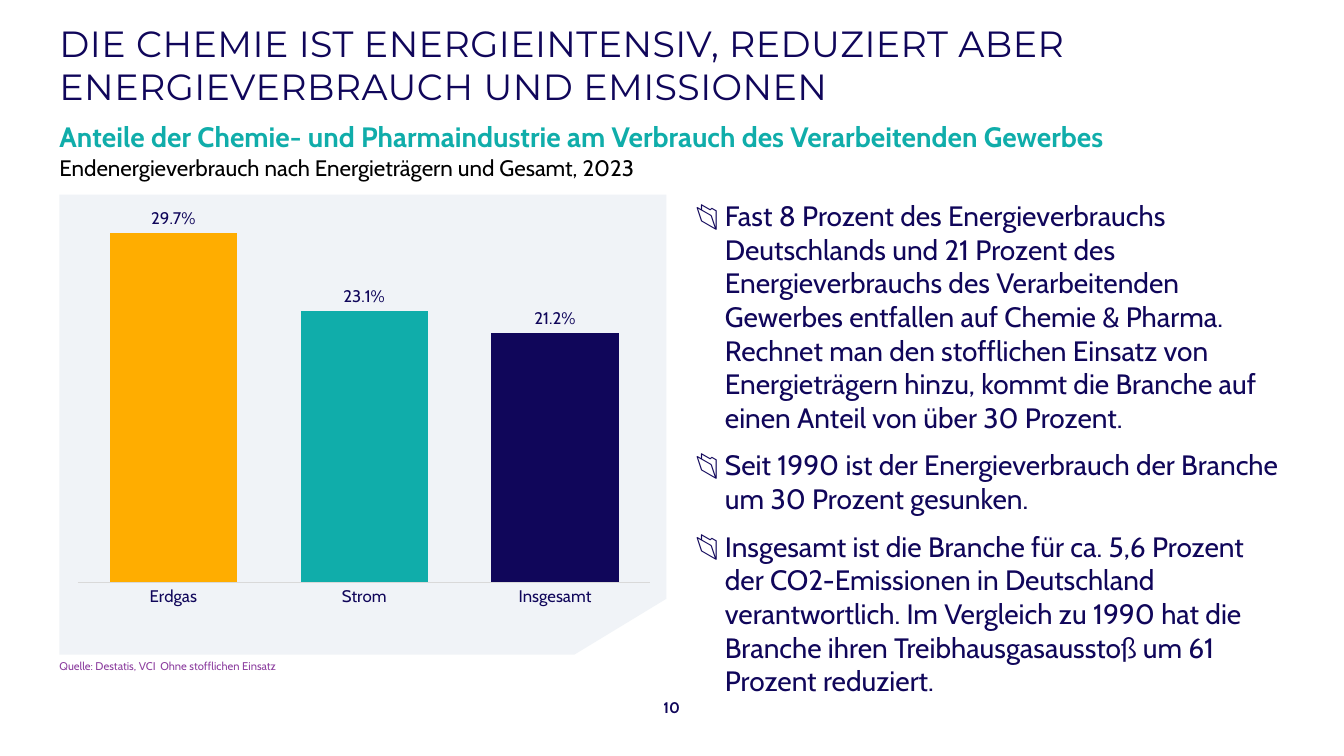
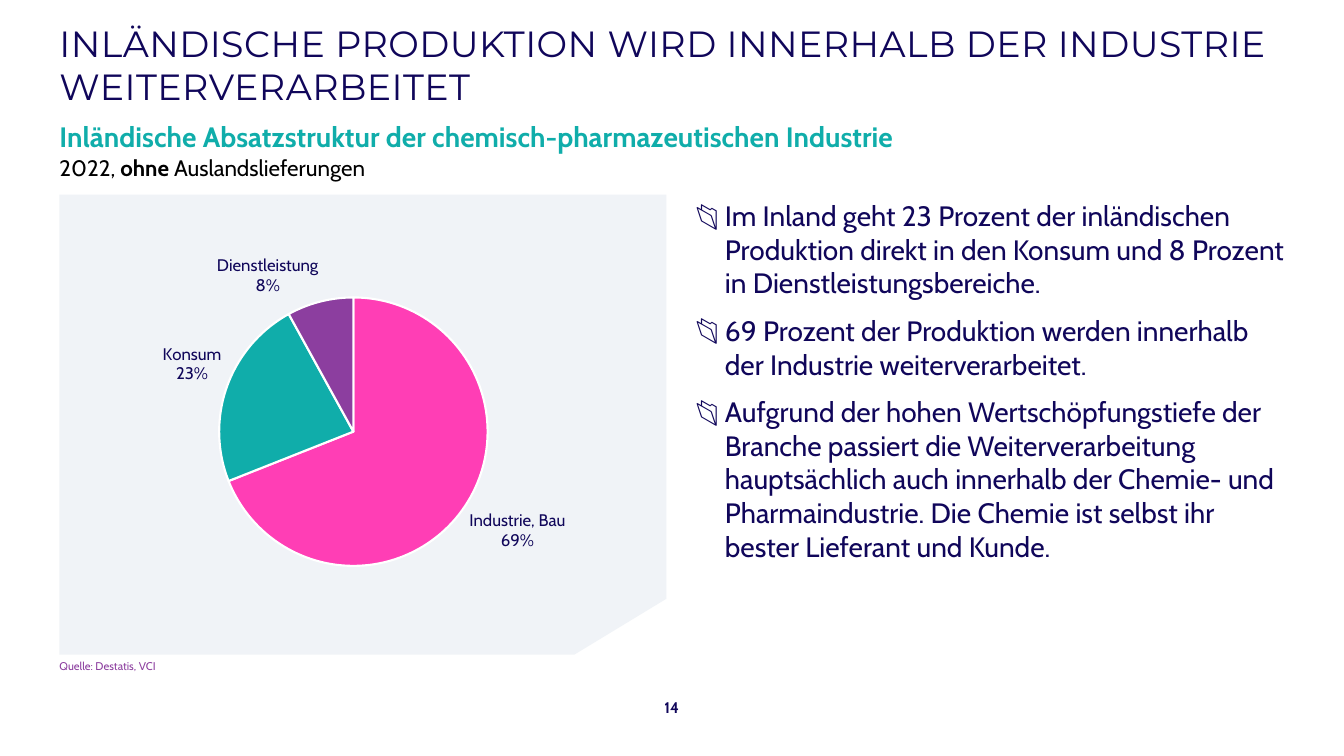
from lxml import etree
from pptx import Presentation
from pptx.chart.data import CategoryChartData
from pptx.dml.color import RGBColor
from pptx.enum.chart import XL_CHART_TYPE as CT, XL_LABEL_POSITION as LP, XL_TICK_MARK as TM
from pptx.enum.text import MSO_ANCHOR as VA, MSO_AUTO_SIZE as FIT, PP_ALIGN as AL
from pptx.oxml import parse_xml
from pptx.oxml.ns import nsdecls, qn
from pptx.util import Pt

# Content; ** encloses bold words
SLIDES = [
    {
        "number": "10",
        "title": "DIE CHEMIE IST ENERGIEINTENSIV, REDUZIERT ABER ENERGIEVERBRAUCH UND EMISSIONEN",
        "heading": "Anteile der Chemie- und Pharmaindustrie am Verbrauch des Verarbeitenden Gewerbes",
        "subheading": "Endenergieverbrauch nach Energieträgern und Gesamt, 2023",
        "source": "Quelle: Destatis, VCI\tOhne stofflichen Einsatz",
        "bullets": [
            "Fast 8 Prozent des Energieverbrauchs Deutschlands und 21 Prozent des "
            "Energieverbrauchs des Verarbeitenden Gewerbes entfallen auf Chemie & Pharma. "
            "Rechnet man den stofflichen Einsatz von Energieträgern hinzu, kommt die Branche "
            "auf einen Anteil von über 30 Prozent.",
            "Seit 1990 ist der Energieverbrauch der Branche um 30 Prozent gesunken.",
            "Insgesamt ist die Branche für ca. 5,6 Prozent der CO2-Emissionen in Deutschland "
            "verantwortlich. Im Vergleich zu 1990 hat die Branche ihren Treibhausgasausstoß "
            "um 61 Prozent reduziert.",
        ],
        "chart": {
            "type": CT.COLUMN_CLUSTERED, "format": "0.0%", "plot": (0.016, 0.053, 0.981, 0.816),
            "points": [("Erdgas", 0.297, "amber"), ("Strom", 0.231, "teal"),
                       ("Insgesamt", 0.212, "navy")],
        },
    },
    {
        "number": "14",
        "title": "INLÄNDISCHE PRODUKTION WIRD INNERHALB DER INDUSTRIE WEITERVERARBEITET",
        "heading": "Inländische Absatzstruktur der chemisch-pharmazeutischen Industrie",
        "subheading": "2022, **ohne** Auslandslieferungen",
        "source": "Quelle: Destatis, VCI",
        "bullets": [
            "Im Inland geht 23 Prozent der inländischen Produktion direkt in den Konsum und "
            "8 Prozent in Dienstleistungsbereiche.",
            "69 Prozent der Produktion werden innerhalb der Industrie weiterverarbeitet.",
            "Aufgrund der hohen Wertschöpfungstiefe der Branche passiert die "
            "Weiterverarbeitung hauptsächlich auch innerhalb der Chemie- und Pharmaindustrie. "
            "Die Chemie ist selbst ihr bester Lieferant und Kunde.",
        ],
        "chart": {
            "type": CT.PIE, "format": "0%", "plot": (0.258, 0.138, 0.46, 0.765),
            "points": [("Industrie, Bau", 69, "pink"), ("Konsum", 23, "teal"),
                       ("Dienstleistung", 8, "purple")],
        },
    },
]

# Shared look
COLORS = {"navy": "10065A", "teal": "10ADAA", "purple": "8C3E9F", "amber": "FFAD00",
          "pink": "FF3EB5", "panel": "F0F3F7", "axis": "D9D9D9", "black": "000000",
          "white": "FFFFFF"}
FONT, TITLE_FONT = "Cabin", "Montserrat"
LEFT, WIDE, TOP = 42.5, 878.4, 139
PANEL = [(LEFT, TOP), (476, TOP), (476, 427.7), (410.4, 467.5), (LEFT, 467.5)]
CHART_BOX = (49, 147.6, 416.9, 308.9)
NUMBER_BOX = (458.6, 495.4, 42.5, 20.2)
# Placeholder index, box and text style of each part
PARTS = {
    "title": (0, (LEFT, 10.8, WIDE, 70.6),
              dict(size=26, font=TITLE_FONT, anchor=VA.MIDDLE, inset=2.9, spacing=30)),
    "heading": (1, (LEFT, 85.7, WIDE, 22.3), dict(size=20, color="teal", bold=True)),
    "subheading": (2, (LEFT, 110.2, WIDE, 20.2), dict(size=16, color="black")),
    "bullets": (3, (496.8, TOP, 424, 317.5), dict(size=20, inset=2.9, bullet="📂")),
    "source": (4, (LEFT, 470.9, 793.4, 9.4), dict(size=8, color="purple", tab=144)),
}


def rgb(name):
    return RGBColor.from_string(COLORS[name])


def place(shape, box):
    shape.left, shape.top, shape.width, shape.height = map(Pt, box)


def set_list_style(p, bullet, tab):
    pPr = p._p.get_or_add_pPr()
    hang = Pt(21) if bullet else 0
    pPr.set("marL", str(hang))
    pPr.set("indent", str(-hang))
    if bullet:
        color = etree.SubElement(pPr, qn("a:buClr"))
        etree.SubElement(color, qn("a:srgbClr"), val=COLORS["navy"])
        etree.SubElement(pPr, qn("a:buChar"), char=bullet)
    else:
        etree.SubElement(pPr, qn("a:buNone"))
    if tab:
        tabs = etree.SubElement(pPr, qn("a:tabLst"))
        etree.SubElement(tabs, qn("a:tab"), pos=str(Pt(tab)), algn="l")


def write(shape, texts, size, color="navy", font=FONT, bold=False, anchor=VA.TOP,
          align=AL.LEFT, inset=0, spacing=0, bullet=None, tab=None):
    tf = shape.text_frame
    tf.word_wrap, tf.auto_size, tf.vertical_anchor = True, FIT.NONE, anchor
    tf.margin_left = tf.margin_right = 0
    tf.margin_top = tf.margin_bottom = Pt(inset)
    for i, text in enumerate(texts):
        p = tf.add_paragraph() if i else tf.paragraphs[0]
        set_list_style(p, bullet, tab)
        p.alignment, p.space_before = align, Pt(10 if i else 0)
        for j, piece in enumerate(text.split("**")):
            r = p.add_run()
            r.text = piece
            r.font.name, r.font.size = font, Pt(size)
            r.font.bold = bold or j % 2 == 1
            r.font.color.rgb = rgb(color)
            if spacing:
                r.font._element.set("spc", str(spacing))


def add_panel(s):
    corners = [(Pt(x), Pt(y)) for x, y in PANEL]
    outline = s.shapes.build_freeform(*corners[0], scale=1.0)
    outline.add_line_segments(corners[1:], close=True)
    panel = outline.convert_to_shape()
    panel.shadow.inherit = False
    panel.fill.solid()
    panel.fill.fore_color.rgb = rgb("panel")
    panel.line.fill.background()


def set_plot_area(chart, plot):
    area = chart.element.find(".//" + qn("c:plotArea"))
    for old in area.findall(qn("c:layout")):
        area.remove(old)
    sizes = "".join(f'<c:{k} val="{v}"/>' for k, v in zip("xywh", plot))
    area.insert(0, parse_xml(
        f'<c:layout {nsdecls("c")}><c:manualLayout><c:layoutTarget val="inner"/>'
        f'<c:xMode val="edge"/><c:yMode val="edge"/>{sizes}</c:manualLayout></c:layout>'))


def style_columns(chart, plot):
    plot.gap_width, plot.overlap = 50, -27
    values, cats = chart.value_axis, chart.category_axis
    values.minimum_scale, values.maximum_scale = 0, 0.3
    values.has_major_gridlines = values.visible = False
    cats.major_tick_mark = cats.minor_tick_mark = TM.NONE
    cats.format.line.color.rgb = rgb("axis")
    cats.format.line.width = Pt(0.75)


def style_pie(plot):
    labels = plot.data_labels
    labels.show_value = False
    labels.show_percentage = labels.show_category_name = True
    bubble = labels._element.find(qn("c:showBubbleSize"))
    separator = etree.Element(qn("c:separator"))
    separator.text = "\n"
    bubble.addnext(separator)
    for point in plot.series[0].points, :
        for i in range(len(plot.categories)):
            point[i].format.line.color.rgb = rgb("white")
            point[i].format.line.width = Pt(1.5)


def add_chart(s, spec_):
    names, values, colors = zip(*spec_["points"])
    data = CategoryChartData(number_format=spec_["format"])
    data.categories = names
    data.add_series("Series 1", values)
    chart = s.shapes.add_chart(spec_["type"], *map(Pt, CHART_BOX), data).chart
    chart.has_legend = chart.has_title = False
    chart.font.name, chart.font.size = FONT, Pt(12)
    chart.font.color.rgb = rgb("navy")
    plot = chart.plots[0]
    plot.vary_by_categories = spec_["type"] == CT.PIE
    plot.has_data_labels = True
    labels = plot.data_labels
    labels.show_value, labels.position = True, LP.OUTSIDE_END
    labels.number_format, labels.number_format_is_linked = spec_["format"], False
    labels.font.name, labels.font.size = FONT, Pt(12)
    labels.font.color.rgb = rgb("navy")
    for i, color in enumerate(colors):
        fill = plot.series[0].points[i].format.fill
        fill.solid()
        fill.fore_color.rgb = rgb(color)
    if spec_["type"] == CT.PIE:
        style_pie(plot)
    else:
        style_columns(chart, plot)
    set_plot_area(chart, spec_["plot"])


def add_slide(prs, content):
    s = prs.slides.add_slide(prs.slide_layouts[4])
    for name, (idx, box, style) in PARTS.items():
        texts = content[name]
        sp = s.placeholders[idx]
        place(sp, box)
        write(sp, [texts] if isinstance(texts, str) else texts, **style)
    add_panel(s)
    add_chart(s, content["chart"])
    number = s.shapes.add_textbox(*map(Pt, NUMBER_BOX))
    write(number, [content["number"]], size=11, bold=True, anchor=VA.MIDDLE, align=AL.CENTER)


def main():
    prs = Presentation()
    prs.slide_width, prs.slide_height = Pt(960), Pt(540)
    for content in SLIDES:
        add_slide(prs, content)
    prs.save("out.pptx")


if __name__ == "__main__":
    main()
